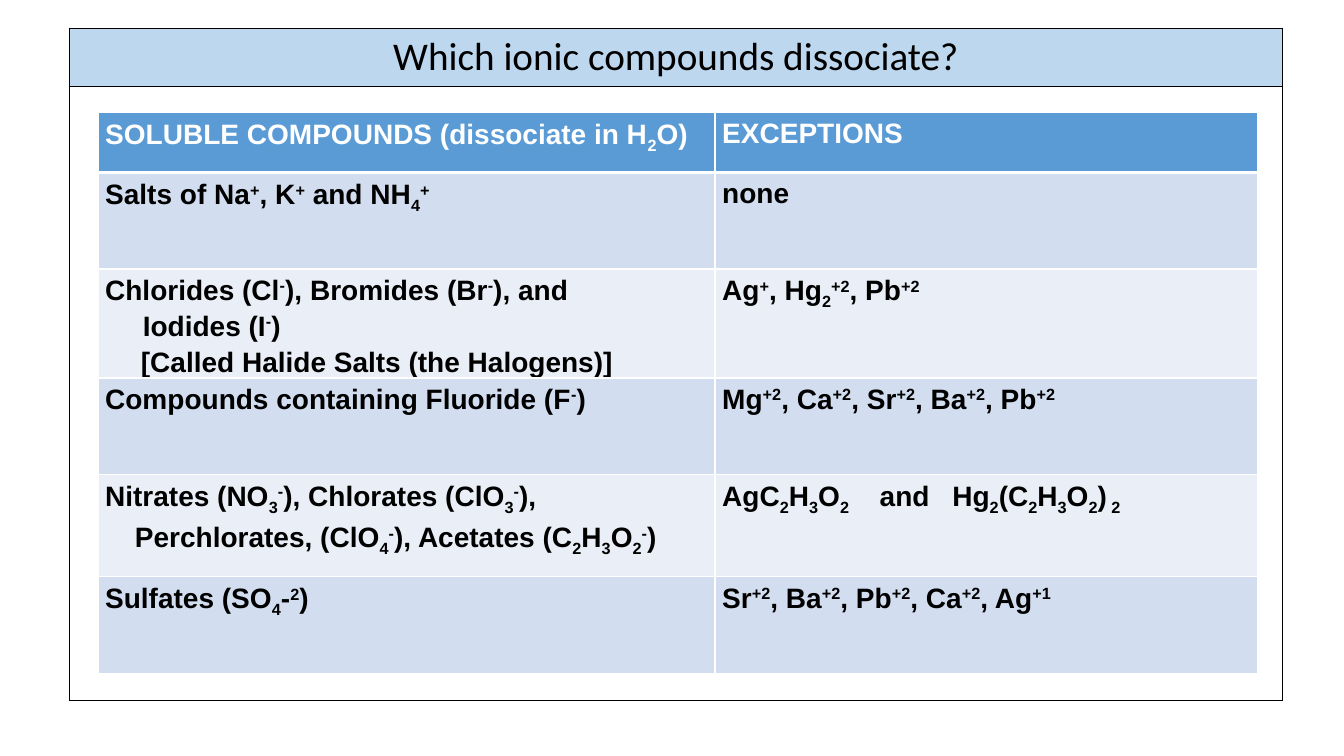
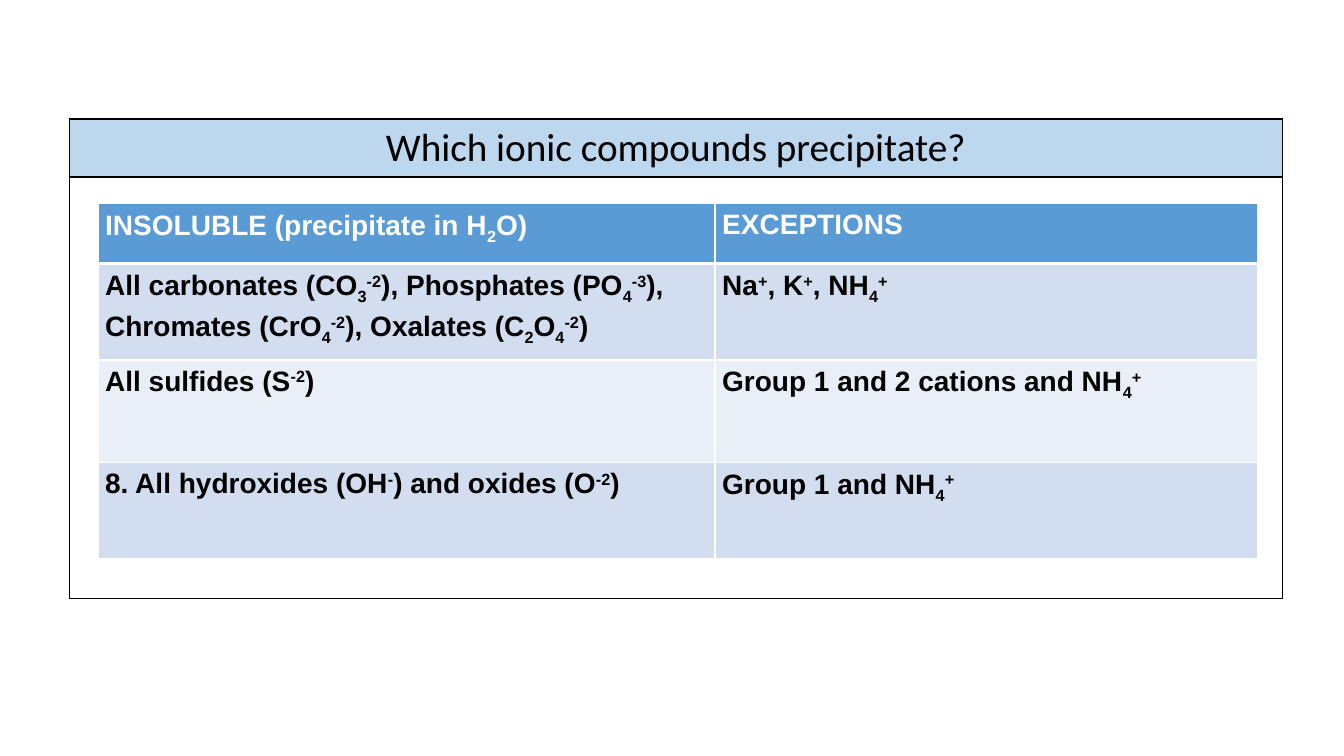
from itertools import cycle, islice
from lxml import etree
from pptx import Presentation
from pptx.dml.color import RGBColor
from pptx.enum import text
from pptx.oxml import ns
from pptx.util import Cm, Pt

# Colours
BLACK = RGBColor(0x00, 0x00, 0x00)
WHITE = RGBColor(0xFF, 0xFF, 0xFF)
TITLE_BAND = RGBColor(0xBD, 0xD7, 0xEE)
HEADER = RGBColor(0x5B, 0x9B, 0xD5)
STRIPES = (RGBColor(0xD2, 0xDE, 0xEF), RGBColor(0xEA, 0xEF, 0xF7))

# Content: |_x| is a subscript, |^x| a superscript.
# A cell is a string, or a list of (left indent in cm, line) pairs.
SLIDES = [
    {
        "title": "Which ionic compounds dissociate?",
        "top": 0.71,
        "body_height": 15.47,
        "rows": [
            ("SOLUBLE COMPOUNDS (dissociate in H|_2|O)", "EXCEPTIONS"),
            ("Salts of Na|^+|, K|^+| and NH|_4|^+", "none"),
            ([(0, "Chlorides (Cl|^-|), Bromides (Br|^-|), and"),
              (0.95, "Iodides (I|^-|)"),
              (0.9, "[Called Halide Salts (the Halogens)]")],
             "Ag|^+|, Hg|_2|^+2|, Pb|^+2"),
            ("Compounds containing Fluoride (F|^-|)",
             "Mg|^+2|, Ca|^+2|, Sr|^+2|, Ba|^+2|, Pb|^+2"),
            ([(0, "Nitrates (NO|_3|^-|), Chlorates (ClO|_3|^-|),"),
              (0.75, "Perchlorates, (ClO|_4|^-|), "
                     "Acetates (C|_2|H|_3|O|_2|^-|)")],
             "AgC|_2|H|_3|O|_2|\tand\tHg|_2|(C|_2|H|_3|O|_2|)|_ 2"),
            ("Sulfates (SO|_4|-|^2|)",
             "Sr|^+2|, Ba|^+2|, Pb|^+2|, Ca|^+2|, Ag|^+1"),
        ],
    },
    {
        "title": "Which ionic compounds precipitate?",
        "top": 3.0,
        "body_height": 10.62,
        "rows": [
            ("INSOLUBLE (precipitate in H|_2|O)", "EXCEPTIONS"),
            ("All carbonates (CO|_3|^-2|), Phosphates (PO|_4|^-3|), "
             "Chromates (CrO|_4|^-2|), Oxalates (C|_2|O|_4|^-2|)",
             "Na|^+|, K|^+|, NH|_4|^+"),
            ("All sulfides (S|^-2|)", "Group 1 and 2 cations and NH|_4|^+"),
            ("8. All hydroxides (OH|^-|) and oxides (O|^-2|)",
             "Group 1 and NH|_4|^+"),
        ],
    },
]

# Layout in cm
FRAME_LEFT, FRAME_WIDTH, TITLE_HEIGHT = 1.75, 30.56, 1.46
GRID_LEFT, GRID_DROP, GRID_WIDTHS = 2.47, 2.12, (15.55, 13.68)
HEADER_HEIGHT, ROW_HEIGHTS = 1.52, (2.43, 2.58)
TAB_STOPS = (3.97, 5.8)

# Formats
TITLE_FONT = {"name": "Calibri", "size": Pt(28), "bold": False}
GRID_FONT = {"name": "Arial", "size": Pt(20), "bold": True}
GRID_MARGINS = {"margin_left": Cm(0.18), "margin_right": Cm(0.18),
                "margin_top": Cm(0.03), "margin_bottom": Cm(0)}
BASELINES = {"_": "-25000", "^": "30000"}


def set_all(target, values):
    for name, value in values.items():
        setattr(target, name, value)


def add_table(page, left, top, widths, heights):
    """Add an unstyled table whose size follows from its columns and rows."""
    frame = page.shapes.add_table(len(heights), len(widths), Cm(left), Cm(top),
                                  Cm(sum(widths)), Cm(sum(heights)))
    table = frame.table
    set_all(table, {"first_row": False, "horz_banding": False})
    for column, width in zip(table.columns, widths):
        column.width = Cm(width)
    for row, height in zip(table.rows, heights):
        row.height = Cm(height)
    return table


def paint(cell, fill, line, top=1, bottom=1):
    """Draw the four borders, then the fill."""
    props = cell._tc.get_or_add_tcPr()
    for side, points in (("L", 1), ("R", 1), ("T", top), ("B", bottom)):
        edge = etree.SubElement(props, ns.qn(f"a:ln{side}"), w=str(Pt(points)))
        solid = etree.SubElement(edge, ns.qn("a:solidFill"))
        etree.SubElement(solid, ns.qn("a:srgbClr"), val=str(line))
    if fill is None:
        cell.fill.background()
    else:
        cell.fill.solid()
        cell.fill.fore_color.rgb = fill


def write(para, line, font, colour):
    """Write marked-up text as runs, raising and lowering the marked parts."""
    for part in filter(None, line.split("|")):
        span = para.add_run()
        baseline = BASELINES.get(part[0])
        span.text = part[1:] if baseline else part
        set_all(span.font, font)
        span.font.color.rgb = colour
        if baseline:
            span.font._element.set("baseline", baseline)


def fill_cell(cell, content, colour):
    set_all(cell, GRID_MARGINS)
    lines = [(0, content)] if isinstance(content, str) else content
    for number, (indent, line) in enumerate(lines):
        frame = cell.text_frame
        para = frame.add_paragraph() if number else frame.paragraphs[0]
        para.line_spacing = 1.15
        props = para._p.get_or_add_pPr()
        if indent:
            props.set("marL", str(Cm(indent)))
        if "\t" in line:
            tabs = etree.SubElement(props, ns.qn("a:tabLst"))
            for stop in TAB_STOPS:
                etree.SubElement(tabs, ns.qn("a:tab"), pos=str(Cm(stop)), algn="l")
        write(para, line, GRID_FONT, colour)


def add_frame(page, title, top, body_height):
    """Title band above an empty outlined body."""
    table = add_table(page, FRAME_LEFT, top, [FRAME_WIDTH],
                      [TITLE_HEIGHT, body_height])
    band, body = table.cell(0, 0), table.cell(1, 0)
    paint(band, TITLE_BAND, BLACK)
    paint(body, None, BLACK)
    para = band.text_frame.paragraphs[0]
    para.alignment = text.PP_ALIGN.CENTER
    write(para, title, TITLE_FONT, BLACK)


def add_grid(page, top, rows):
    """Header row, then rows in alternating colours."""
    heights = [HEADER_HEIGHT, *islice(cycle(ROW_HEIGHTS), len(rows) - 1)]
    fills = [HEADER, *islice(cycle(STRIPES), len(rows) - 1)]
    table = add_table(page, GRID_LEFT, top, GRID_WIDTHS, heights)
    for r, (row, fill) in enumerate(zip(rows, fills)):
        for c, content in enumerate(row):
            cell = table.cell(r, c)
            paint(cell, fill, WHITE, top=3 if r == 1 else 1,
                  bottom=3 if r == 0 else 1)
            fill_cell(cell, content, BLACK if r else WHITE)


def main():
    deck = Presentation()
    set_all(deck, {"slide_width": Cm(33.87), "slide_height": Cm(19.05)})
    for content in SLIDES:
        page = deck.slides.add_slide(deck.slide_layouts[6])
        add_frame(page, content["title"], content["top"], content["body_height"])
        add_grid(page, content["top"] + GRID_DROP, content["rows"])
    deck.save("out.pptx")


if __name__ == "__main__":
    main()
